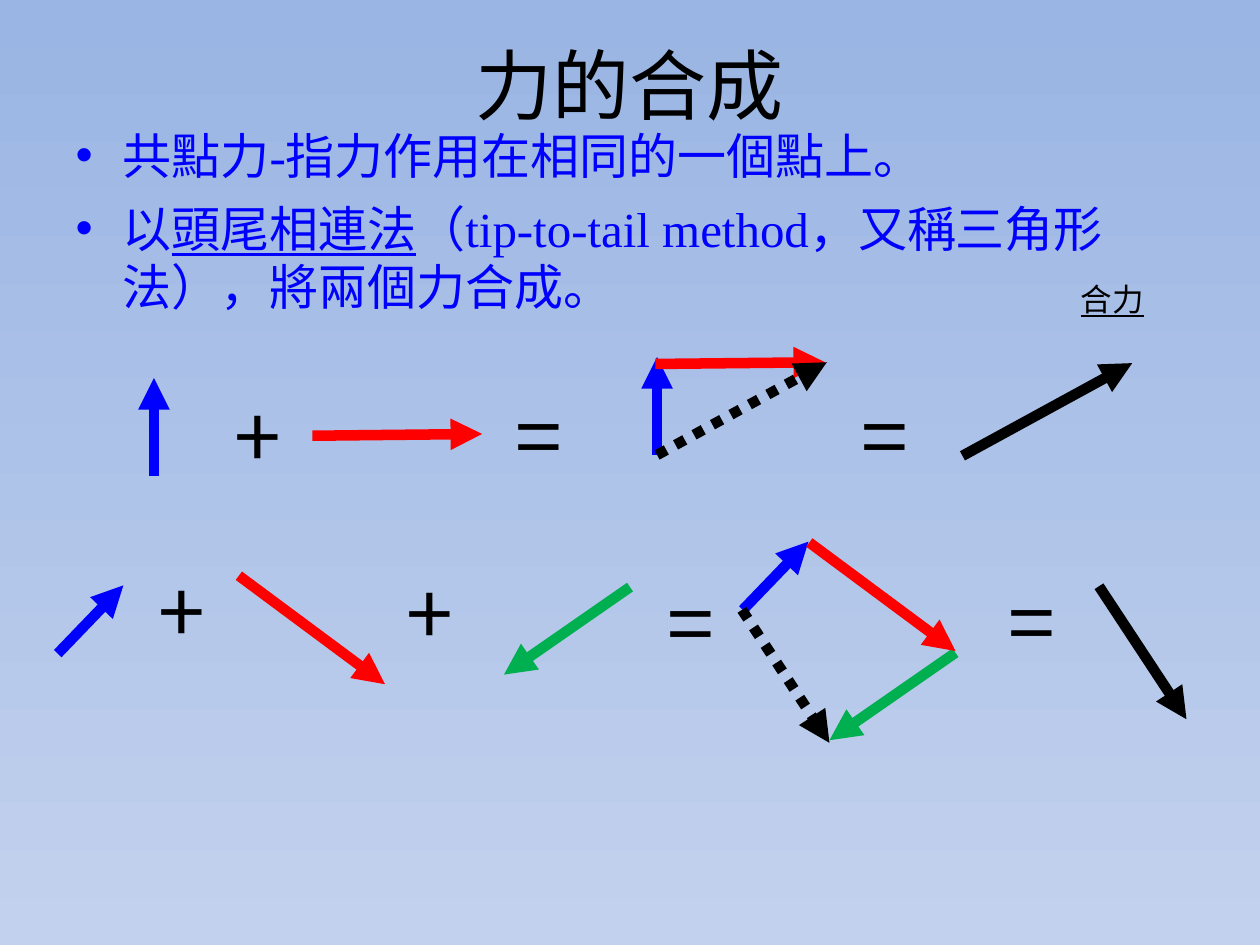
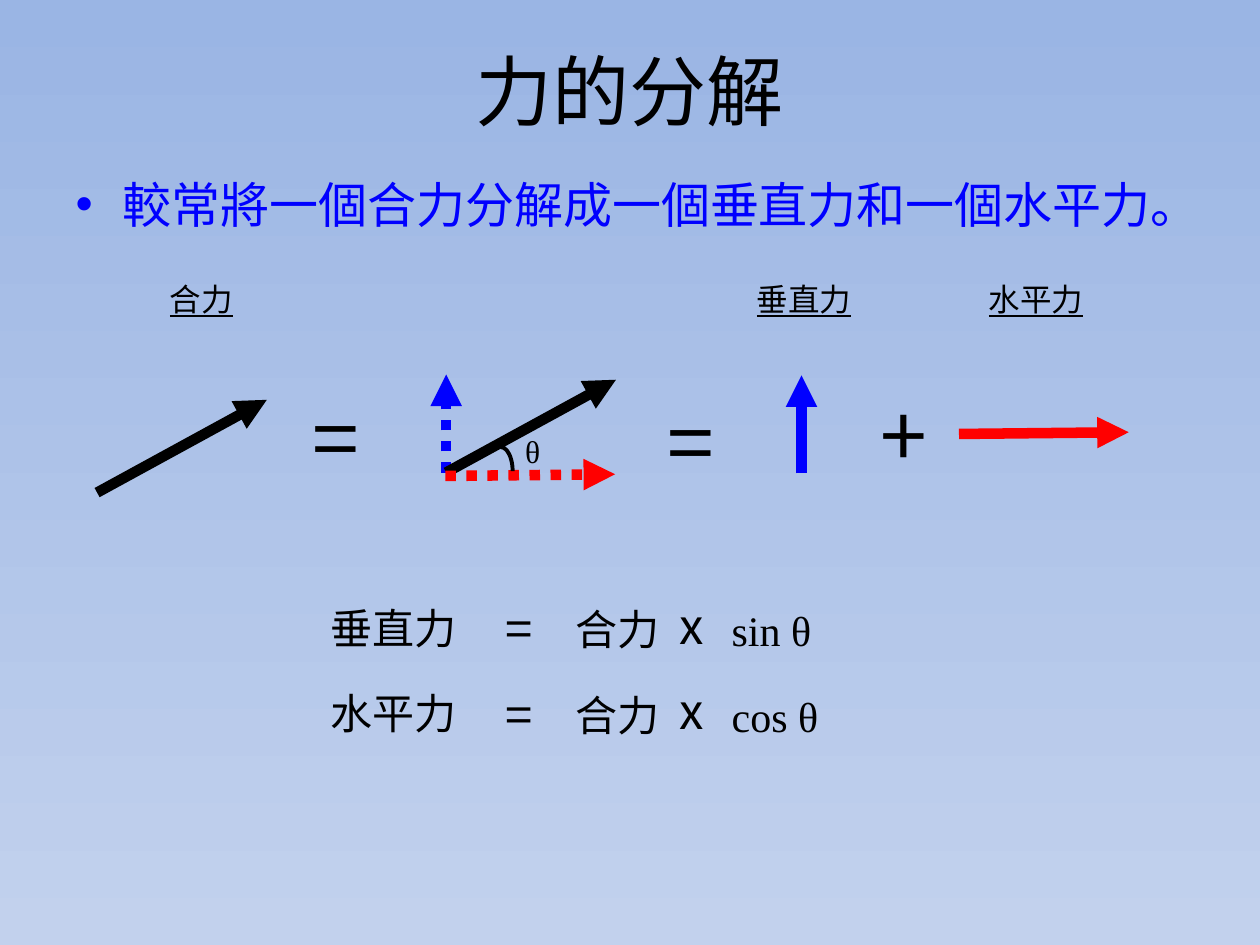
from lxml import etree
from pptx import Presentation
from pptx.enum import dml, shapes, text
from pptx.dml.color import RGBColor
from pptx.oxml import ns
from pptx.util import Pt

COLORS = {
    "sky_top": "9AB5E4", "sky_bottom": "C2D1ED",
    "black": "000000", "blue": "0000FF", "red": "FF0000", "green": "00B050",
}
SANS = "Noto Sans CJK SC"
SERIF = "Times New Roman"

# Forces as (x, y) components in points, each with its colour
UP = (0, -56), "blue"
RIGHT = (97, -1), "red"
RESULTANT = (97, -53), "black"
RISING = (37.5, -39), "blue"
FALLING = (83.5, 62), "red"
RETURNING = (-72, 50), "green"
TOTAL = (50, 76), "black"


def color(name):
    return RGBColor.from_string(COLORS[name])


def style_font(para, face, size, shade="black"):
    font = para.font
    font.name, font.size = face, Pt(size)
    font.color.rgb = color(shade)


def set_background(master):
    fill = master.background.fill
    fill.gradient()
    fill.gradient_angle = 270
    for stop, position, name in zip(fill.gradient_stops, (0, 1), ("sky_top", "sky_bottom")):
        stop.position = position
        stop.color.rgb = color(name)


def place(box, left, top, width, height):
    box.left, box.top, box.width, box.height = map(Pt, (left, top, width, height))


def add_page(deck, title, title_top, bullets, body_top, body_height):
    """Each bullet is a list of (words, underlined) pairs."""
    page = deck.slides.add_slide(deck.slide_layouts[1])
    heading, body = page.placeholders
    place(heading, 36, title_top, 648, 90)
    heading.text_frame.text = title
    # A deep bottom margin lifts the centred title clear of the list
    heading.text_frame.margin_bottom = Pt(33.6)
    style_font(heading.text_frame.paragraphs[0], SANS, 44)

    place(body, 36, body_top, 648, body_height)
    frame = body.text_frame
    for index, parts in enumerate(bullets):
        para = frame.add_paragraph() if index else frame.paragraphs[0]
        para.space_before = Pt(8 if index else 0)
        bullet = etree.SubElement(para._p.get_or_add_pPr(), ns.qn("a:buChar"))
        bullet.set("char", "•")
        style_font(para, SERIF, 28, "blue")
        for words, underlined in parts:
            span = para.add_run()
            span.text = words
            if underlined:
                span.font.underline = True
    return page


def add_text(page, words, left, top, width, height, face, size, underlined=False):
    box = page.shapes.add_textbox(*map(Pt, (left, top, width, height)))
    box.text_frame.word_wrap = False
    box.text_frame.auto_size = text.MSO_AUTO_SIZE.SHAPE_TO_FIT_TEXT
    para = box.text_frame.paragraphs[0]
    para.text = words
    style_font(para, face, size)
    if underlined:
        para.font.underline = True


def add_sign(page, sign, left, top):
    add_text(page, sign, left, top, 39, 65.5, SANS, 48)


def add_label(page, words, left):
    add_text(page, words, left, 156.5, 15 + 18 * len(words), 29, SERIF, 18, True)


def add_force(page, force, left, top, dotted=False):
    (across, down), shade = force
    arrow = page.shapes.add_connector(
        shapes.MSO_CONNECTOR.STRAIGHT,
        *map(Pt, (left, top, left + across, top + down)))
    arrow.line.color.rgb = color(shade)
    arrow.line.width = Pt(6)
    if dotted:
        arrow.line.dash_style = dml.MSO_LINE.ROUND_DOT
    etree.SubElement(arrow.line._get_or_add_ln(), ns.qn("a:tailEnd")).set("type", "triangle")
    etree.SubElement(arrow._element.spPr, ns.qn("a:effectLst"))


def add_angle(page):
    arc = page.shapes.add_shape(shapes.MSO_SHAPE.ARC, *map(Pt, (279.5, 255.5, 13.5, 27.5)))
    arc.shadow.inherit = False
    arc.fill.background()
    arc.line.color.rgb = color("black")
    arc.line.width = Pt(2.25)
    add_text(page, "θ", 293, 243.5, 23, 29, SERIF, 18)


def add_formula(page, component, function, function_width, top):
    for words, left, rise, width, height, face, size in (
            (component, 182, 0, 86.5, 36, SERIF, 24),
            ("=", 281.5, -2, 29.5, 41, SANS, 28),
            ("合力", 322, 1, 63, 36, SERIF, 24),
            ("x", 381.5, -4, 28, 41, SANS, 28),
            (function, 411, 1.5, function_width, 36, SERIF, 24)):
        add_text(page, words, left, top + rise, width, height, face, size)


def build_composition(deck):
    page = add_page(
        deck, "力的合成", 18,
        [[("共點力-指力作用在相同的一個點上。", False)],
         [("以", False), ("頭尾相連法", True),
          ("（tip-to-tail method，又稱三角形法），將兩個力合成。", False)]],
        68, 109)
    add_label(page, "合力", 610.5)

    # Two forces
    add_force(page, UP, 88, 272)
    add_force(page, RIGHT, 178.5, 249)
    add_force(page, UP, 375.5, 260)
    add_force(page, RIGHT, 374.5, 208)
    add_force(page, RESULTANT, 375.5, 260, dotted=True)
    add_force(page, RESULTANT, 550, 260.5)
    for sign, left in (("+", 127), ("=", 287.5), ("=", 485.5)):
        add_sign(page, sign, left, 216)

    # Three forces
    add_force(page, RISING, 33, 373.5)
    add_force(page, FALLING, 136.5, 329)
    add_force(page, RETURNING, 360, 335.5)
    add_force(page, RISING, 424.5, 348.5)
    add_force(page, RETURNING, 546, 373)
    add_force(page, FALLING, 462.5, 310)
    add_force(page, TOTAL, 424, 348.5, dotted=True)
    add_force(page, TOTAL, 628, 335)
    for sign, left, top in (("+", 83.5, 316), ("+", 225.5, 317.5),
                            ("=", 374.5, 323), ("=", 569.5, 322.5)):
        add_sign(page, sign, left, top)


def build_resolution(deck):
    page = add_page(
        deck, "力的分解", 21.5,
        [[("較常將一個合力分解成一個垂直力和一個水平力。", False)]], 96, 81)
    for words, left in (("合力", 90), ("垂直力", 425.5), ("水平力", 558)):
        add_label(page, words, left)

    # Resultant and its components
    add_force(page, RESULTANT, 55.5, 281.5)
    add_force(page, UP, 255, 270, dotted=True)
    add_force(page, RESULTANT, 255, 270)
    add_force(page, RIGHT, 254.5, 272, dotted=True)
    add_force(page, UP, 458, 270.5)
    add_force(page, RIGHT, 548, 248)
    for sign, left, top in (("=", 171.5, 217.5), ("=", 374.5, 219.5), ("+", 496, 215.5)):
        add_sign(page, sign, left, top)
    add_angle(page)

    # Formulas
    add_formula(page, "垂直力", "sin θ", 60.5, 340.5)
    add_formula(page, "水平力", "cos θ", 65, 389.5)


def main():
    deck = Presentation()
    deck.slide_width, deck.slide_height = Pt(720), Pt(540)
    set_background(deck.slide_master)
    build_composition(deck)
    build_resolution(deck)
    deck.save("out.pptx")


if __name__ == "__main__":
    main()
